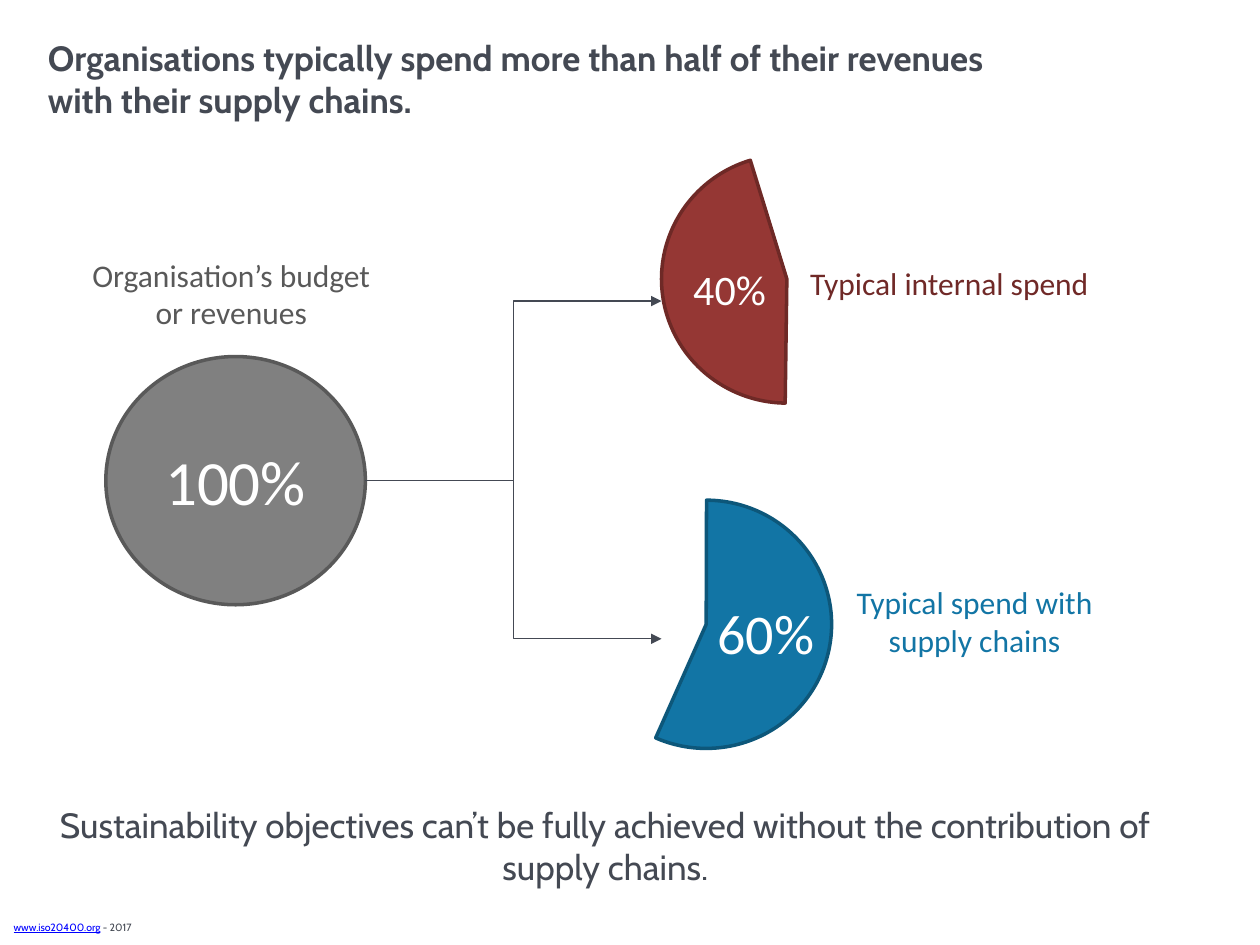
from lxml import etree
from pptx import Presentation
from pptx.dml.color import RGBColor
from pptx.enum.shapes import MSO_CONNECTOR, MSO_SHAPE
from pptx.enum.text import MSO_ANCHOR, MSO_AUTO_SIZE, PP_ALIGN
from pptx.oxml.ns import qn
from pptx.util import Inches, Pt

ELBOW = MSO_CONNECTOR.ELBOW
OVAL, PIE = MSO_SHAPE.OVAL, MSO_SHAPE.PIE
MIDDLE, TOP = MSO_ANCHOR.MIDDLE, MSO_ANCHOR.TOP
LEFT, CENTER = PP_ALIGN.LEFT, PP_ALIGN.CENTER

# Content
INK, GREY, WHITE, LINK = "444953", "595959", "FFFFFF", "0000FF"
TITLE = "Organisations typically spend more than half of their revenues with their supply chains."
MESSAGE = "Sustainability objectives can’t be fully achieved without the contribution of supply chains."
FOOTER = [("www.iso20400.org", LINK, True), (" - 2017", INK, False)]
BUDGET = "Organisation’s budget or revenues"
PIE_SIZE = (1.99, 1.97)
SPENDS = [
    {"label": "Typical internal spend", "label_at": (6.08, 2.05, 2.91, 0.4), "label_color": "702927",
     "share": "40%", "share_at": (5.4, 2.04, 0.78, 0.5), "share_size": 24,
     "pie_at": (5.25, 1.23), "angles": (90.79, 252.87), "fill": "953734", "line": "6E2926",
     "arrow_y": 2.39},
    {"label": "Typical spend with supply chains", "label_at": (6.6, 4.58, 2.27, 0.71),
     "label_color": "1275A5",
     "share": "60%", "share_at": (5.59, 4.7, 0.98, 0.64), "share_size": 32,
     "pie_at": (4.61, 3.97), "angles": (270.15, 113.98), "fill": "1275A5", "line": "0D577A",
     "arrow_y": 5.07},
]
CIRCLE = (0.84, 2.83, 2.06, 1.97)
ARROW_END_X = 5.25


def rgb(code):
    return RGBColor.from_string(code)


def style(span, size, color, font="Calibri", bold=False):
    span.font.size, span.font.name, span.font.bold = Pt(size), font, bold
    span.font.color.rgb = rgb(color)


def write(shape, text, size, color, font="Calibri", align=CENTER, anchor=TOP, bold=False, wrap=True):
    frame = shape.text_frame
    frame.text = text
    frame.word_wrap, frame.vertical_anchor = wrap, anchor
    frame.auto_size = MSO_AUTO_SIZE.NONE
    para = frame.paragraphs[0]
    para.alignment = align
    style(para.runs[0], size, color, font, bold)


def add_text(page, at, *args, **options):
    box = page.shapes.add_textbox(*map(Inches, at))
    write(box, *args, **options)


def add_figure(page, kind, at, fill, line):
    shape = page.shapes.add_shape(kind, *map(Inches, at))
    shape.shadow.inherit = False
    shape.fill.solid()
    shape.fill.fore_color.rgb = rgb(fill)
    shape.line.color.rgb = rgb(line)
    shape.line.width = Pt(2)
    return shape


def add_arrow(page, start, end):
    arrow = page.shapes.add_connector(ELBOW, *map(Inches, start + end))
    arrow.line.color.rgb = rgb(INK)
    arrow.line.width = Pt(0.75)
    etree.SubElement(arrow.line._get_or_add_ln(), qn("a:tailEnd"), type="triangle")
    etree.SubElement(arrow._element.spPr, qn("a:effectLst"))


def main():
    deck = Presentation()
    deck.slide_width, deck.slide_height = Inches(10), Inches(7.5)
    page = deck.slides.add_slide(deck.slide_layouts[5])

    # Title, message and footer
    title = page.shapes.title
    title.left, title.top, title.width, title.height = map(Inches, (0.28, 0.43, 7.87, 0.38))
    write(title, TITLE, 20, INK, "Cabin", LEFT, MIDDLE, bold=True)
    add_text(page, (0.2, 6.33, 9.21, 0.77), MESSAGE, 20, INK, "Cabin")
    footer = page.shapes.add_textbox(*map(Inches, (0.01, 7.26, 6.47, 0.2)))
    footer.text_frame.word_wrap = True
    for text, color, underline in FOOTER:
        span = footer.text_frame.paragraphs[0].add_run()
        span.text = text
        style(span, 6, color, "Cabin")
        span.font.underline = underline

    # Whole budget
    circle = add_figure(page, OVAL, CIRCLE, "808080", GREY)
    write(circle, "100%", 36, WHITE, anchor=MIDDLE)
    add_text(page, (0.54, 1.98, 2.59, 0.71), BUDGET, 18, GREY)

    # Shares of the budget, each with its arrow
    left, top, width, height = CIRCLE
    start = (left + width, top + height / 2)
    for spend in SPENDS:
        pie = add_figure(page, PIE, spend["pie_at"] + PIE_SIZE, spend["fill"], spend["line"])
        for index, degrees in enumerate(spend["angles"]):
            pie.adjustments[index] = degrees * 0.6  # 60000 units a degree, stored as 100000ths
        add_text(page, spend["label_at"], spend["label"], 18, spend["label_color"])
        add_text(page, spend["share_at"], spend["share"], spend["share_size"], WHITE, wrap=False)
        add_arrow(page, start, (ARROW_END_X, spend["arrow_y"]))

    deck.save("out.pptx")


if __name__ == "__main__":
    main()
